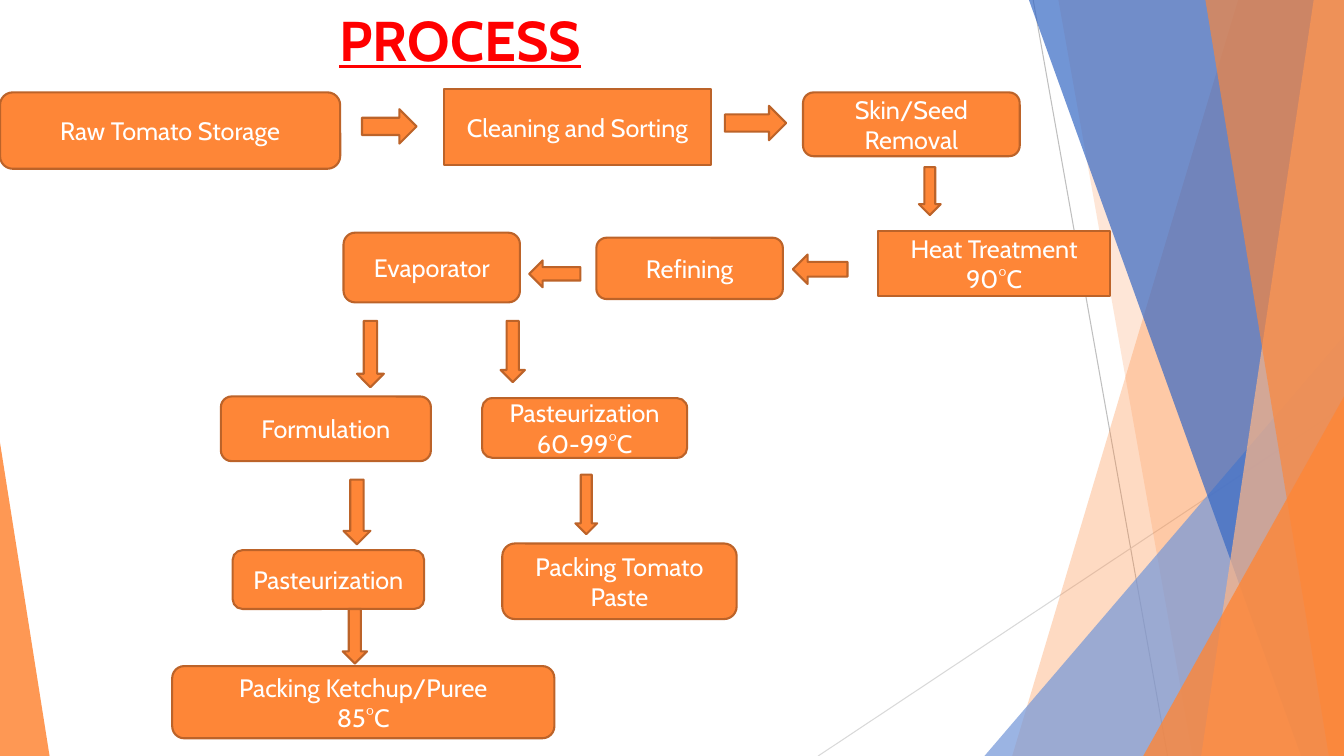
from lxml.etree import SubElement
from pptx import Presentation
from pptx.dml.color import RGBColor
from pptx.enum.shapes import MSO_CONNECTOR, MSO_SHAPE as SHAPE
from pptx.enum.text import MSO_ANCHOR, MSO_AUTO_SIZE, PP_ALIGN
from pptx.oxml.ns import qn
from pptx.util import Inches, Pt

# The slide is a grid of 160 columns by 90 rows, twelve to the inch
UNIT = Inches(1) // 12
COLUMNS, ROWS = 160, 90
FONT = "Cabin"
ORANGE, OUTLINE = "FE8637", "BC6329"


def grid(*lengths):
    return [round(length * UNIT) for length in lengths]


def paint(shape, color, opacity=100, outline=None):
    shape.shadow.inherit = False
    shape.fill.solid()
    shape.fill.fore_color.rgb = RGBColor.from_string(color)
    if opacity < 100:
        fill_color = shape.fill._xPr.find(".//" + qn("a:srgbClr"))
        SubElement(fill_color, qn("a:alpha")).set("val", str(opacity * 1000))
    if outline:
        shape.line.color.rgb = RGBColor.from_string(outline)
        shape.line.width = Pt(1.5)
    else:
        shape.line.fill.background()


presentation = Presentation()
presentation.slide_width, presentation.slide_height = grid(COLUMNS, ROWS)
slide = presentation.slides.add_slide(presentation.slide_layouts[5])
shapes = slide.shapes

# Thin background lines
for ends, color in [
    ((123, 0, 139, ROWS), "BFBFBF"),
    ((COLUMNS, 48.4, 97.4, ROWS), "D9D9D9"),
]:
    line = shapes.add_connector(MSO_CONNECTOR.STRAIGHT, *grid(*ends))
    line.line.color.rgb = RGBColor.from_string(color)
    line.line.width = Pt(0.75)
    SubElement(line._element.spPr, qn("a:effectLst"))

# Background facets, back to front: a band runs from its top-left column
# to its bottom-left column and fills to the right edge of the slide;
# a triangle has a box and the place of its apex (0 left, 1 right)
facets = [
    ("band", (147.4, 120.5), ORANGE, 30),
    ("band", (126, 142), ORANGE, 20),
    ("triangle", (117.2, 40, 42.8, 50, 1), "7598D9", 72),
    ("band", (122.5, 154.9), "3668C4", 70),
    ("band", (156.4, 143), "FEB687", 70),
    ("band", (143.5, 158.2), ORANGE, 65),
    ("triangle", (136.1, 47.2, 23.9, 42.8, 1), ORANGE, 80),
    ("triangle", (0, 52.7, 5.9, 37.3, 0), ORANGE, 85),
]
for kind, geometry, color, opacity in facets:
    if kind == "band":
        top, bottom = geometry
        outline = shapes.build_freeform(*grid(top, 0))
        corners = [(COLUMNS, 0), (COLUMNS, ROWS), (bottom, ROWS)]
        outline.add_line_segments([grid(*corner) for corner in corners])
        facet = outline.convert_to_shape()
    else:
        *box, apex = geometry
        facet = shapes.add_shape(SHAPE.ISOSCELES_TRIANGLE, *grid(*box))
        facet.adjustments[0] = apex
    paint(facet, color, opacity)

# Title
title = shapes.title
title.left, title.top, title.width, title.height = grid(0, 0, 138, 10)
title_frame = title.text_frame
title_frame.text = "PROCESS"
title_frame.auto_size = MSO_AUTO_SIZE.NONE
title_frame.vertical_anchor = MSO_ANCHOR.TOP
title_frame.margin_left = grid(40.4)[0]
paragraph = title_frame.paragraphs[0]
paragraph.alignment = PP_ALIGN.LEFT
font = paragraph.runs[0].font
font.name, font.size, font.bold, font.underline = FONT, Pt(40), True, True
font.color.rgb = RGBColor.from_string("FF0000")

# Process steps: text, shape, left, top, width, height
ROUND, SQUARE = SHAPE.ROUNDED_RECTANGLE, SHAPE.RECTANGLE
steps = [
    ("Raw Tomato Storage", ROUND, 0, 11, 40.5, 9.1),
    ("Cleaning and Sorting", SQUARE, 52.9, 10.6, 31.7, 9.1),
    ("Skin/Seed Removal", ROUND, 95.6, 11, 25.8, 7.6),
    ("Heat Treatment\n90°C", SQUARE, 104.5, 27.5, 27.7, 7.7),
    ("Refining", ROUND, 71, 28.3, 22.2, 7.3),
    ("Evaporator", ROUND, 40.9, 27.7, 21, 8.3),
    ("Formulation", ROUND, 26.3, 47.2, 25, 7.7),
    ("Packing Tomato Paste", ROUND, 59.8, 64.7, 27.9, 9),
    ("Pasteurization\n60-99°C", ROUND, 57.4, 47.4, 24.4, 7.1),
    ("Pasteurization", ROUND, 27.7, 65.5, 22.8, 7),
    ("Packing Ketchup/Puree\n85°C", ROUND, 20.5, 79.3, 45.5, 8.6),
]
for text, kind, *box in steps:
    step = shapes.add_shape(kind, *grid(*box))
    paint(step, ORANGE, outline=OUTLINE)
    step.text_frame.text = text
    step.text_frame.vertical_anchor = MSO_ANCHOR.MIDDLE
    for paragraph in step.text_frame.paragraphs:
        paragraph.alignment = PP_ALIGN.CENTER
        font = paragraph.runs[0].font
        font.name, font.size = FONT, Pt(18)
        font.color.rgb = RGBColor.from_string("FFFFFF")

# Block arrows between the steps: shape, left, top, width, height
RIGHT, LEFT, DOWN = SHAPE.RIGHT_ARROW, SHAPE.LEFT_ARROW, SHAPE.DOWN_ARROW
arrows = [
    (RIGHT, 43.1, 13, 6.5, 4.1),
    (RIGHT, 86.3, 12.6, 7.3, 4.1),
    (DOWN, 109.4, 19.9, 2.6, 5.7),
    (LEFT, 94.4, 30.3, 6.5, 3.5),
    (LEFT, 63, 31, 6.1, 3.2),
    (DOWN, 42.5, 38.2, 3.2, 7.9),
    (DOWN, 59.6, 38.2, 2.9, 7.3),
    (DOWN, 68.5, 56.5, 2.6, 7.1),
    (DOWN, 40.9, 57.1, 3.2, 7.7),
    (DOWN, 40.8, 72.5, 2.9, 6.5),
]
for kind, *box in arrows:
    arrow = shapes.add_shape(kind, *grid(*box))
    paint(arrow, ORANGE, outline=OUTLINE)

presentation.save("out.pptx")
